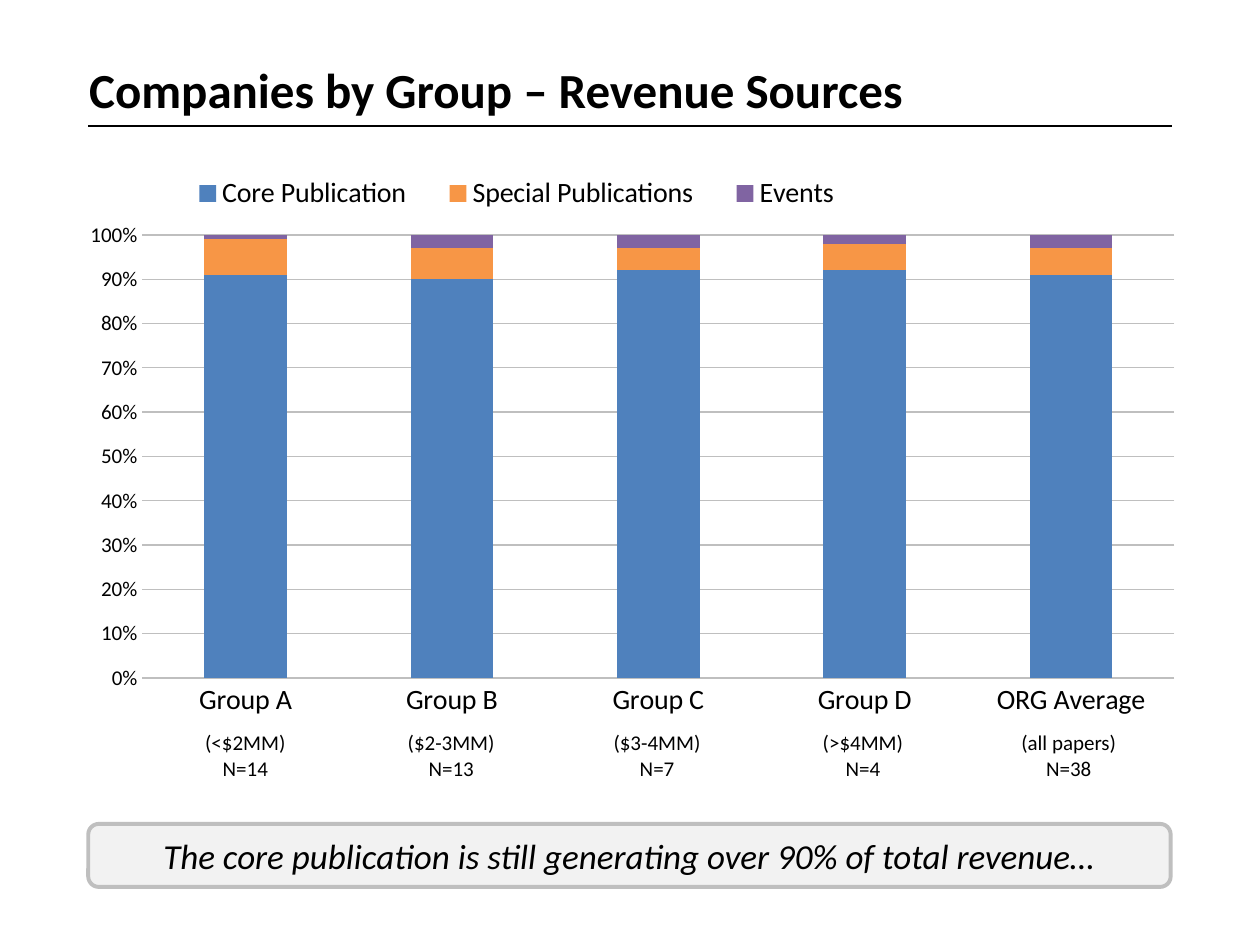
from lxml import etree
from pptx import Presentation
from pptx.chart.data import CategoryChartData
from pptx.dml.color import RGBColor
from pptx.enum.chart import XL_CHART_TYPE, XL_LEGEND_POSITION, XL_TICK_MARK
from pptx.enum.shapes import MSO_CONNECTOR, MSO_SHAPE
from pptx.enum.text import MSO_ANCHOR, PP_ALIGN
from pptx.oxml.ns import qn
from pptx.util import Cm, Pt

STACKED = XL_CHART_TYPE.COLUMN_STACKED_100
BOTTOM = XL_LEGEND_POSITION.BOTTOM
NO_TICK = XL_TICK_MARK.NONE
STRAIGHT = MSO_CONNECTOR.STRAIGHT
ROUNDED = MSO_SHAPE.ROUNDED_RECTANGLE
MIDDLE = MSO_ANCHOR.MIDDLE
CENTER = PP_ALIGN.CENTER

BLACK = RGBColor(0x00, 0x00, 0x00)
SILVER = RGBColor(0xBF, 0xBF, 0xBF)
PALE = RGBColor(0xF2, 0xF2, 0xF2)
BLUE = RGBColor(0x4F, 0x81, 0xBD)
ORANGE = RGBColor(0xF7, 0x96, 0x46)
PURPLE = RGBColor(0x80, 0x64, 0xA2)
FACE = "Calibri"

GROUPS = [
    ("Group A", "(<$2MM)", "N=14"),
    ("Group B", "($2-3MM)", "N=13"),
    ("Group C", "($3-4MM)", "N=7"),
    ("Group D", "(>$4MM)", "N=4"),
    ("ORG Average", "(all papers)", "N=38"),
]
SERIES = [
    ("Core Publication", (91, 91, 92, 92, 91), BLUE),
    ("Special Publications", (8, 7, 5, 6, 6), ORANGE),
    ("Events", (1, 3, 3, 2, 3), PURPLE),
]


def set_font(font, size):
    font.name = FACE
    font.size = Pt(size)
    font.color.rgb = BLACK


def set_layout(part, x, y, w, h, inner=False):
    """Place a chart part by fractions of the chart's box."""
    layout = part.find(qn("c:layout"))
    if layout is None:
        layout = etree.Element(qn("c:layout"))
        pos = part.find(qn("c:legendPos"))
        if pos is None:
            part.insert(0, layout)
        else:
            pos.addnext(layout)
    manual = etree.SubElement(layout, qn("c:manualLayout"))
    rules = [("layoutTarget", "inner")] if inner else []
    rules += [("xMode", "edge"), ("yMode", "edge")]
    rules += [("x", x), ("y", y), ("w", w), ("h", h)]
    for tag, val in rules:
        etree.SubElement(manual, qn(f"c:{tag}")).set("val", str(val))


def add_title(slide, x, y, w, h):
    box = slide.shapes.add_textbox(Cm(x), Cm(y), Cm(w), Cm(h))
    box.text_frame.word_wrap = True
    para = box.text_frame.paragraphs[0]
    para.text = "Companies by Group – Revenue Sources"
    set_font(para.font, 28)
    para.font.bold = True
    # Rule under the title, inset like the text
    line = slide.shapes.add_connector(
        STRAIGHT, Cm(x + 0.23), Cm(y + h), Cm(x + 22.07), Cm(y + h))
    line.line.color.rgb = BLACK
    line.line.width = Pt(0.75)
    etree.SubElement(line._element.spPr, qn("a:effectLst"))


def add_revenue(slide, x, y, w, h):
    data = CategoryChartData(number_format="0")
    data.categories = [group[0] for group in GROUPS]
    for name, vals, _ in SERIES:
        data.add_series(name, vals)
    chart = slide.shapes.add_chart(
        STACKED, Cm(x), Cm(y), Cm(w), Cm(h), data).chart
    set_font(chart.font, 18)
    chart.has_title = False

    # Columns
    plot = chart.plots[0]
    plot.gap_width = 150
    plot.overlap = 100
    plot.vary_by_categories = False
    for series, (_, _, color) in zip(plot.series, SERIES):
        series.format.fill.solid()
        series.format.fill.fore_color.rgb = color

    # Axes
    for axis, size in ((chart.category_axis, 16), (chart.value_axis, 12)):
        axis.major_tick_mark = axis.minor_tick_mark = NO_TICK
        axis.format.line.fill.background()
        set_font(axis.tick_labels.font, size)
    scale = chart.value_axis
    scale.minimum_scale, scale.maximum_scale = 0, 1
    scale.major_unit = 0.1
    scale.tick_labels.number_format = "0%"
    scale.tick_labels.number_format_is_linked = False
    scale.major_gridlines.format.line.color.rgb = SILVER
    scale.major_gridlines.format.line.width = Pt(0.75)

    # Legend above the plot
    chart.has_legend = True
    legend = chart.legend
    legend.position = BOTTOM
    legend.include_in_layout = False
    set_font(legend.font, 16)
    set_layout(legend._element, 0.09, 0.03, 0.62, 0.08)
    area = chart._chartSpace.chart.plotArea
    set_layout(area, 0.07, 0.14, 0.91, 0.75, inner=True)


def add_sizes(slide, x, y, w, h):
    rows = list(zip(*GROUPS))[1:]
    table = slide.shapes.add_table(
        len(rows), len(GROUPS), Cm(x), Cm(y), Cm(w), Cm(h)).table
    table.first_row = table.horz_banding = False
    for r, texts in enumerate(rows):
        for c, text in enumerate(texts):
            cell = table.cell(r, c)
            cell.fill.background()
            cell.vertical_anchor = MIDDLE
            cell.margin_left = cell.margin_right = 0
            cell.margin_top = cell.margin_bottom = 0
            para = cell.text_frame.paragraphs[0]
            para.text = text
            para.alignment = CENTER
            set_font(para.font, 12)


def add_banner(slide, x, y, w, h):
    box = slide.shapes.add_shape(ROUNDED, Cm(x), Cm(y), Cm(w), Cm(h))
    box.shadow.inherit = False
    box.fill.solid()
    box.fill.fore_color.rgb = PALE
    box.line.color.rgb = SILVER
    box.line.width = Pt(2.25)
    box.text_frame.word_wrap = True
    box.text_frame.vertical_anchor = MIDDLE
    para = box.text_frame.paragraphs[0]
    para.text = ("The core publication is still generating "
                 "over 90% of total revenue…")
    para.alignment = CENTER
    set_font(para.font, 20)
    para.font.italic = True


def main():
    deck = Presentation()
    deck.slide_width, deck.slide_height = Cm(25.4), Cm(19.05)
    slide = deck.slides.add_slide(deck.slide_layouts[6])
    add_banner(slide, 1.78, 16.61, 21.82, 1.27)
    add_revenue(slide, 1.27, 3.07, 22.86, 11.91)
    add_title(slide, 1.55, 1.07, 21.59, 1.47)
    add_sizes(slide, 2.87, 14.73, 20.75, 1.03)
    deck.save("out.pptx")


if __name__ == "__main__":
    main()
